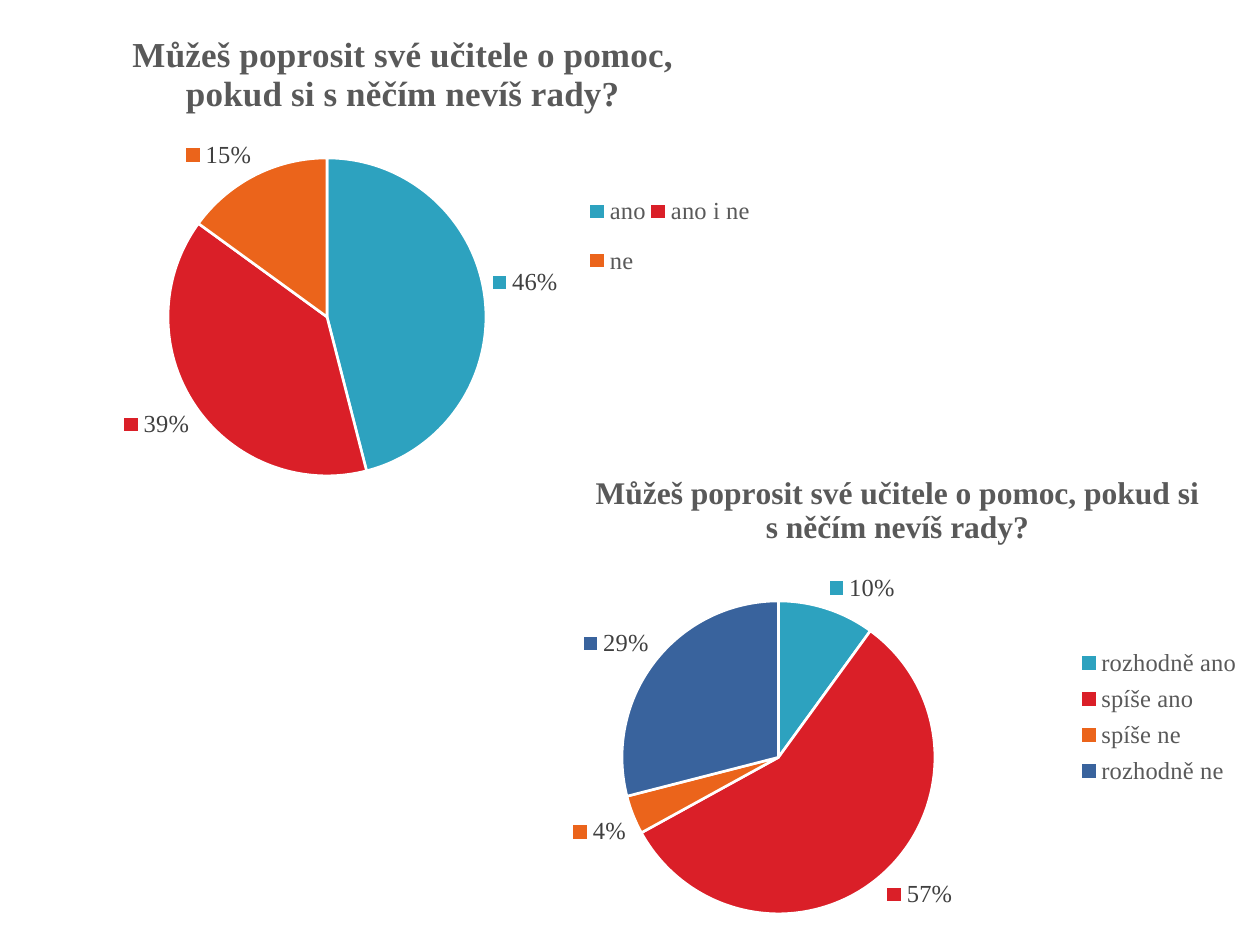
from lxml.etree import SubElement
from pptx import Presentation
from pptx.chart.data import CategoryChartData
from pptx.dml.color import RGBColor
from pptx.enum.chart import XL_CHART_TYPE, XL_LABEL_POSITION, XL_LEGEND_POSITION
from pptx.oxml import parse_xml
from pptx.oxml.ns import nsdecls, qn
from pptx.util import Emu, Pt

PX = 914400 // 126
CHART_SIZE = (794, 496)
QUESTION = "Můžeš poprosit své učitele o pomoc, pokud si s něčím nevíš rady?"

THEME = {
    "font": "Times New Roman",
    "base_font": "Cambria",
    "base_size": 10,
    "text_size": 14,
    "text": "595959",
    "label": "404040",
    "border": "FFFFFF",
    "slices": ["2DA2BF", "DA1F28", "EB641B", "39639D"],
}

# Boxes are px inside the chart frame: left, top[, width, height]
CHARTS = [
    {
        "position": (466, 449),
        "answers": {"rozhodně ano": 10, "spíše ano": 57, "spíše ne": 4, "rozhodně ne": 29},
        "title_size": 18,
        "title": (124, 18),
        "pie": (156, 152, 313, 313),
        "legend": (598, 192, 190, 152),
    },
    {
        "position": (0, -1),
        "answers": {"ano": 46, "ano i ne": 39, "ne": 15},
        "title_size": 20,
        "title": (126, 26),
        "pie": (168, 159, 318, 318),
        "legend": (585, 177, 170, 120),
    },
]


def style_font(font, size, color, name=THEME["font"], bold=False):
    font.name = name
    font.size = Pt(size)
    font.bold = bold
    font.color.rgb = RGBColor.from_string(color)


def set_layout(element, box, after=None, inner=False):
    """Place a chart part by hand, in fractions of the chart frame."""
    for old in element.findall(qn("c:layout")):
        element.remove(old)
    layout = parse_xml(f"<c:layout {nsdecls('c')}><c:manualLayout/></c:layout>")
    manual = layout[0]
    if inner:
        SubElement(manual, qn("c:layoutTarget")).set("val", "inner")
    for mode in ("xMode", "yMode"):
        SubElement(manual, qn(f"c:{mode}")).set("val", "edge")
    for index, (name, length) in enumerate(zip("xywh", box)):
        share = length / CHART_SIZE[index % 2]
        SubElement(manual, qn(f"c:{name}")).set("val", f"{share:.4f}")
    if after:
        element.find(qn(after)).addnext(layout)
    else:
        element.insert(0, layout)


def add_pie(slide, content):
    data = CategoryChartData()
    data.categories = list(content["answers"])
    data.add_series("Series 1", list(content["answers"].values()))
    frame = [Emu(length * PX) for length in content["position"] + CHART_SIZE]
    chart = slide.shapes.add_chart(XL_CHART_TYPE.PIE, *frame, data).chart
    style_font(chart.font, THEME["base_size"], "000000", THEME["base_font"])

    chart.has_title = True
    text_frame = chart.chart_title.text_frame
    text_frame.text = QUESTION
    style_font(text_frame.paragraphs[0].runs[0].font, content["title_size"],
               THEME["text"], bold=True)
    chart.chart_title.include_in_layout = False
    set_layout(chart.chart_title._element, content["title"], after="c:tx")

    chart.has_legend = True
    chart.legend.position = XL_LEGEND_POSITION.RIGHT
    chart.legend.include_in_layout = False
    style_font(chart.legend.font, THEME["text_size"], THEME["text"])
    set_layout(chart.legend._element, content["legend"], after="c:legendPos")

    plot = chart.plots[0]
    plot.vary_by_categories = True
    set_layout(plot._element.getparent(), content["pie"], inner=True)
    for index, color in zip(range(len(content["answers"])), THEME["slices"]):
        slice_format = plot.series[0].points[index].format
        slice_format.fill.solid()
        slice_format.fill.fore_color.rgb = RGBColor.from_string(color)
        slice_format.line.width = Pt(1.5)
        slice_format.line.color.rgb = RGBColor.from_string(THEME["border"])

    labels = plot.series[0].data_labels
    labels.show_value = False
    labels.show_percentage = True
    labels.show_legend_key = True
    labels.number_format = "0%"
    labels.number_format_is_linked = False
    labels.position = XL_LABEL_POSITION.OUTSIDE_END
    style_font(labels.font, THEME["text_size"], THEME["label"])


def main():
    presentation = Presentation()
    presentation.slide_width = Emu(1260 * PX)
    presentation.slide_height = Emu(945 * PX)
    slide = presentation.slides.add_slide(presentation.slide_layouts[6])
    for content in CHARTS:
        add_pie(slide, content)
    presentation.save("out.pptx")


if __name__ == "__main__":
    main()
